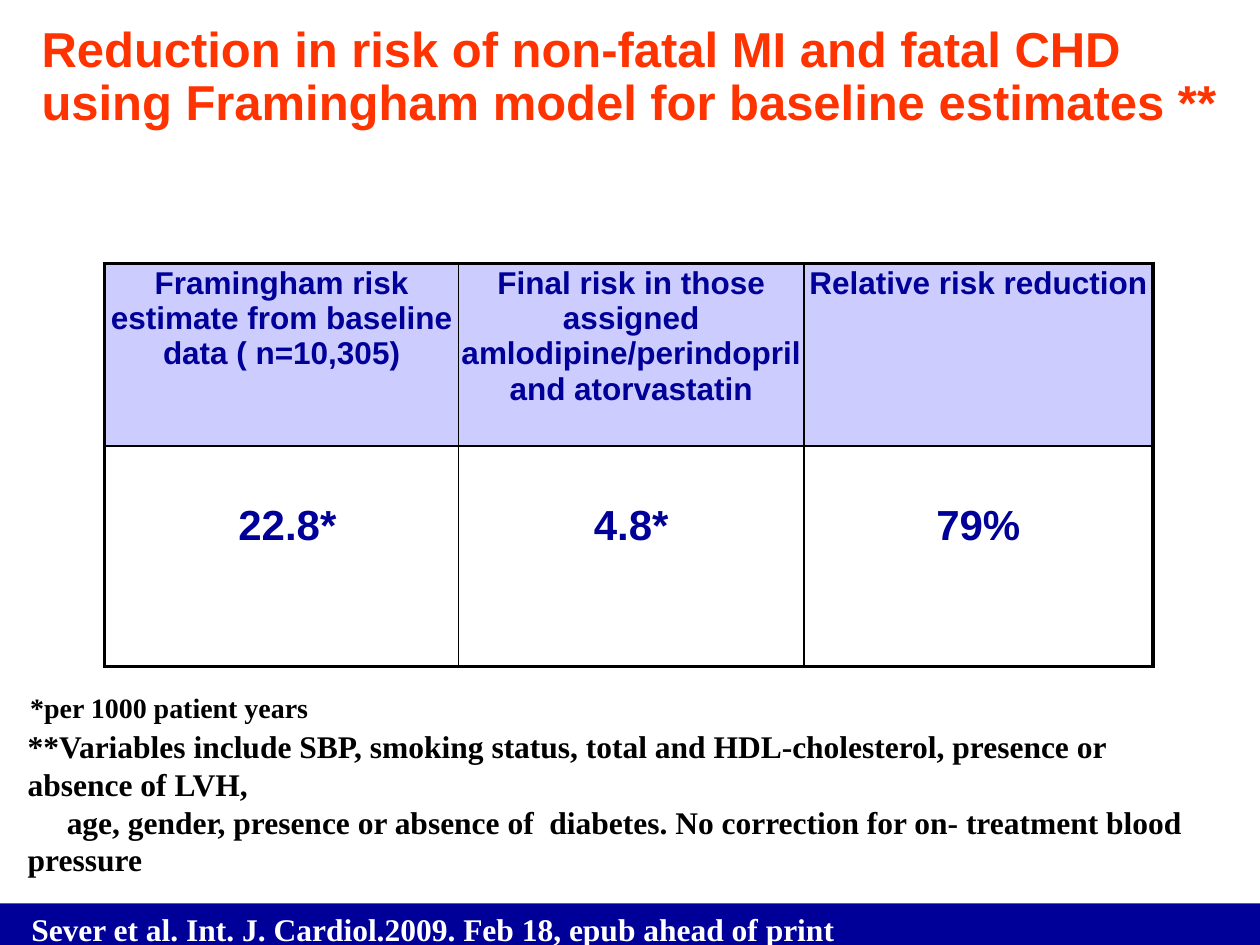
"""Build a slide with a risk reduction table, footnotes and a citation bar."""
from lxml.etree import SubElement
from pptx import Presentation
from pptx.dml.color import RGBColor
from pptx.enum.shapes import MSO_SHAPE
from pptx.enum.text import MSO_ANCHOR, MSO_AUTO_SIZE, PP_ALIGN
from pptx.oxml.ns import qn
from pptx.util import Inches, Pt

COLORS = {"navy": "000099", "lilac": "CCCCFF", "red": "FF3300",
          "black": "000000", "white": "FFFFFF"}


def write(p, text, size, font, color):
    r = p.add_run()
    r.text = text
    for name, value in {"size": Pt(size), "name": font, "bold": True}.items():
        setattr(r.font, name, value)
    r.font.color.rgb = RGBColor.from_string(COLORS[color])


def set_frame(tf, inset, **extra):
    sides = ("margin_left", "margin_top", "margin_right", "margin_bottom")
    values = {side: Inches(inset) for side in sides}
    values.update(word_wrap=True, vertical_anchor=MSO_ANCHOR.TOP, **extra)
    for name, value in values.items():
        setattr(tf, name, value)


prs = Presentation()
prs.slide_width, prs.slide_height = Inches(10), Inches(7.5)
s = prs.slides.add_slide(prs.slide_layouts[5])

bar = s.shapes.add_shape(MSO_SHAPE.RECTANGLE, 0, Inches(7.17), Inches(10), Inches(0.33))
bar.shadow.inherit = False
bar.fill.solid()
bar.fill.fore_color.rgb = RGBColor.from_string(COLORS["navy"])
bar.line.fill.background()

title = s.shapes.title
title.left, title.top = Inches(0.33), Inches(0.2)
title.width, title.height = Inches(9.45), Inches(0.46)
set_frame(title.text_frame, 0, auto_size=MSO_AUTO_SIZE.NONE)
p = title.text_frame.paragraphs[0]
p.alignment, p.line_spacing = PP_ALIGN.LEFT, 0.9
write(p, "Reduction in risk of non-fatal MI and fatal CHD using Framingham model "
         "for baseline estimates **", 28, "Arial", "red")

rows = [
    ["Framingham risk estimate from baseline data ( n=10,305)",
     "Final risk in those assigned amlodipine/perindopril and atorvastatin",
     "Relative risk reduction"],
    [" 22.8*", "4.8*", "79%"],
]
table = s.shapes.add_table(2, 3, Inches(0.83), Inches(2.09), Inches(8.32), Inches(3.2)).table
table.first_row = table.horz_banding = False
for column, width in zip(table.columns, (2.81, 2.74, 2.77)):
    column.width = Inches(width)
for row, height in zip(table.rows, (1.45, 1.75)):
    row.height = Inches(height)

for i, texts in enumerate(rows):
    for j, text in enumerate(texts):
        cell = table.cell(i, j)
        for side in ("left", "right", "top", "bottom"):
            setattr(cell, f"margin_{side}", Inches(0.02))
        p = cell.text_frame.paragraphs[0]
        p.alignment = PP_ALIGN.CENTER
        write(p, text, 24 if i else 18, "Arial", "navy")
        tcPr = cell._tc.get_or_add_tcPr()
        outer = {"lnL": j == 0, "lnR": j == 2, "lnT": i == 0, "lnB": i == 1}
        for tag, is_outer in outer.items():
            ln = SubElement(tcPr, qn(f"a:{tag}"), w=str(Pt(2.25 if is_outer else 1)))
            fill = SubElement(ln, qn("a:solidFill"))
            SubElement(fill, qn("a:srgbClr"), val=COLORS["black"])
        if i == 0:
            cell.fill.solid()
            cell.fill.fore_color.rgb = RGBColor.from_string(COLORS["lilac"])
        else:
            cell.fill.background()
            cell.margin_top = Inches(0.45)

notes = [
    ((0.22, 5.46, 5.37, 0.31), 0.02, 16, "black", ["*per 1000 patient years"]),
    ((0.2, 5.75, 9.48, 1.25), 0.02, 18, "black",
     ["**Variables include SBP, smoking status, total and HDL-cholesterol, "
      "presence or absence of LVH,",
      "age, gender, presence or absence of  diabetes. No correction for "
      "on- treatment blood pressure"]),
    ((0.15, 7.17, 9.66, 0.4), 0.1, 18, "white",
     ["Sever et al. Int. J. Cardiol.2009. Feb 18, epub ahead of print"]),
]
for box, inset, size, color, lines in notes:
    tf = s.shapes.add_textbox(*map(Inches, box)).text_frame
    set_frame(tf, inset, auto_size=MSO_AUTO_SIZE.SHAPE_TO_FIT_TEXT)
    tf.margin_top = tf.margin_bottom = Inches(inset / 2 if inset > 0.05 else inset)
    for n, line in enumerate(lines):
        p = tf.add_paragraph() if n else tf.paragraphs[0]
        if n:
            p._p.get_or_add_pPr().set("indent", str(Inches(0.31)))
        write(p, line, size, "Times New Roman", color)

prs.save("out.pptx")
